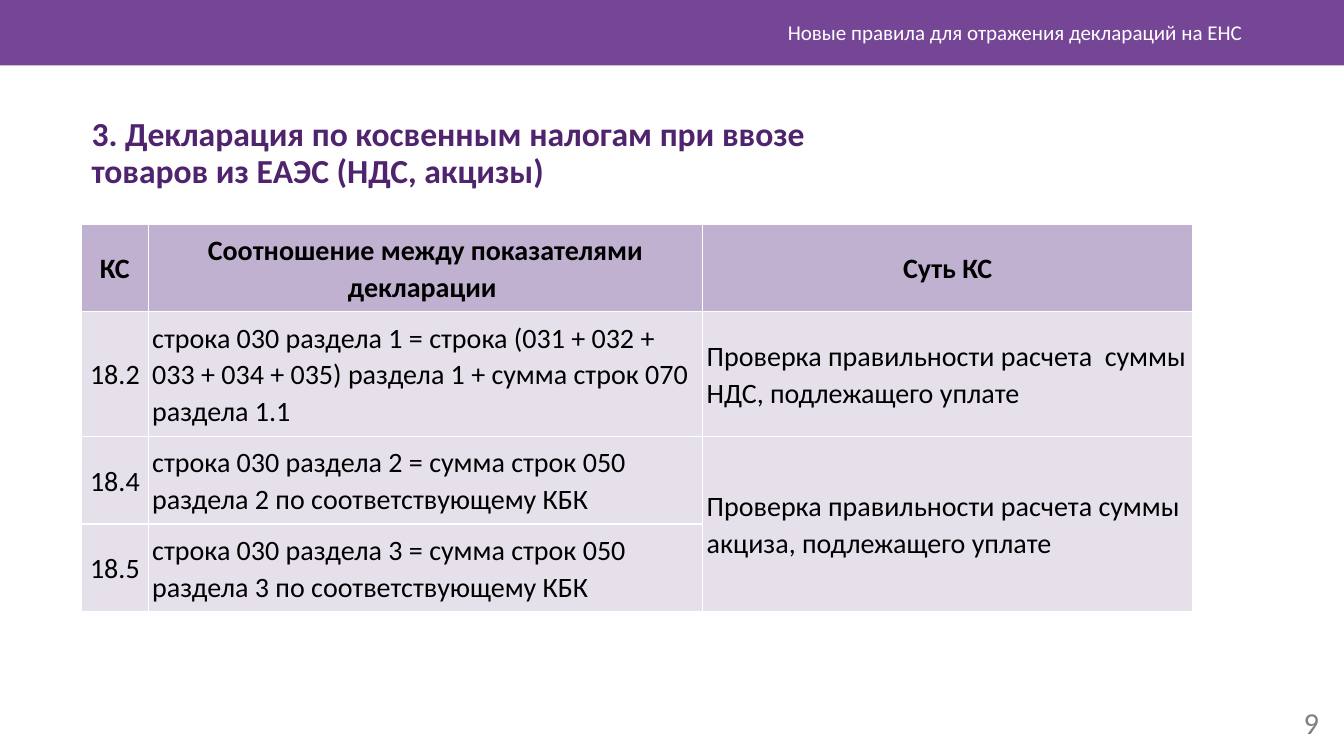
from lxml import etree
from pptx import Presentation
from pptx.dml.color import RGBColor
from pptx.enum.shapes import MSO_SHAPE
from pptx.enum.text import MSO_ANCHOR, PP_ALIGN
from pptx.oxml.ns import qn
from pptx.util import Inches, Pt

FONT = "Calibri"
PURPLE = RGBColor(0x76, 0x46, 0x96)
DARK_PURPLE = RGBColor(0x50, 0x23, 0x6E)
HEADER_FILL = RGBColor(0xC1, 0xB1, 0xD1)
BODY_FILL = RGBColor(0xE6, 0xE0, 0xEB)
GRAY = RGBColor(0x80, 0x80, 0x80)
WHITE = RGBColor(0xFF, 0xFF, 0xFF)
BLACK = RGBColor(0, 0, 0)

TOPIC = "Новые правила для отражения деклараций на ЕНС"
TITLE = [
    "3. Декларация по косвенным налогам при ввозе",
    "товаров из ЕАЭС (НДС, акцизы)",
]
PAGE_NUMBER = "9"
ROWS = [
    ("КС", "Соотношение между показателями декларации ", "Суть КС"),
    ("18.2",
     "строка 030 раздела 1 = строка (031 + 032 + 033 + 034 + 035) раздела 1 "
     "+ сумма строк 070 раздела 1.1",
     "Проверка правильности расчета  суммы НДС, подлежащего уплате"),
    ("18.4",
     "строка 030 раздела 2 = сумма строк 050 раздела 2 по соответствующему КБК",
     "Проверка правильности расчета суммы акциза, подлежащего уплате"),
    ("18.5",
     "строка 030 раздела 3 = сумма строк 050 раздела 3 по соответствующему КБК",
     ""),
]
COLUMN_WIDTHS = [0.66, 5.5, 4.86]
ROW_HEIGHTS = [0.86, 1.24, 0.87, 0.87]


def format_paragraph(paragraph, size, color, bold=False, align=PP_ALIGN.LEFT, spacing=1.0):
    paragraph.alignment = align
    paragraph.line_spacing = spacing
    for run in paragraph.runs:
        font = run.font
        font.name, font.size, font.bold = FONT, Pt(size), bold
        font.color.rgb = color


def add_text(slide, box, lines, size, color, anchor=MSO_ANCHOR.MIDDLE, **style):
    text_frame = slide.shapes.add_textbox(*map(Inches, box)).text_frame
    text_frame.word_wrap = True
    text_frame.vertical_anchor = anchor
    text_frame.text = "\n".join(lines)
    for paragraph in text_frame.paragraphs:
        format_paragraph(paragraph, size, color, **style)


def add_white_borders(cell):
    """Insert the four borders ahead of the fill, as the schema requires."""
    properties = cell._tc.get_or_add_tcPr()
    for position, side in enumerate(("lnL", "lnR", "lnT", "lnB")):
        line = etree.Element(qn(f"a:{side}"), w=str(Pt(1)))
        fill = etree.SubElement(line, qn("a:solidFill"))
        etree.SubElement(fill, qn("a:srgbClr"), val=str(WHITE))
        properties.insert(position, line)


def add_checks_table(slide):
    table = slide.shapes.add_table(
        len(ROWS), len(COLUMN_WIDTHS), Inches(0.81), Inches(2.23),
        Inches(sum(COLUMN_WIDTHS)), Inches(sum(ROW_HEIGHTS))).table
    for column, width in zip(table.columns, COLUMN_WIDTHS):
        column.width = Inches(width)
    for row, height in zip(table.rows, ROW_HEIGHTS):
        row.height = Inches(height)
    for i, texts in enumerate(ROWS):
        for j, text in enumerate(texts):
            is_header = i == 0
            cell = table.cell(i, j)
            cell.text = text
            cell.vertical_anchor = MSO_ANCHOR.MIDDLE
            cell.margin_left = cell.margin_right = Inches(0.04)
            cell.margin_top = cell.margin_bottom = Inches(0.07)
            cell.fill.solid()
            cell.fill.fore_color.rgb = HEADER_FILL if is_header else BODY_FILL
            add_white_borders(cell)
            align = PP_ALIGN.CENTER if is_header or j == 0 else PP_ALIGN.LEFT
            format_paragraph(cell.text_frame.paragraphs[0], 20, BLACK,
                             bold=is_header, align=align, spacing=1.07)
    table.cell(2, 2).merge(table.cell(3, 2))


def main():
    presentation = Presentation()
    presentation.slide_width = Inches(13.33)
    presentation.slide_height = Inches(7.5)
    slide = presentation.slides.add_slide(presentation.slide_layouts[6])

    band = slide.shapes.add_shape(
        MSO_SHAPE.RECTANGLE, 0, 0, presentation.slide_width, Inches(0.65))
    band.shadow.inherit = False
    band.fill.solid()
    band.fill.fore_color.rgb = PURPLE
    band.line.fill.background()

    add_text(slide, (12.51, 6.97, 0.67, 0.4), [PAGE_NUMBER], 21.7, GRAY, align=PP_ALIGN.RIGHT)
    add_text(slide, (3.54, 0.12, 8.88, 0.4), [TOPIC], 15, WHITE, align=PP_ALIGN.RIGHT)
    add_text(slide, (0.81, 1.12, 10.43, 0.99), TITLE, 24, DARK_PURPLE,
             anchor=MSO_ANCHOR.TOP, bold=True, spacing=0.9)
    add_checks_table(slide)
    presentation.save("out.pptx")


if __name__ == "__main__":
    main()
